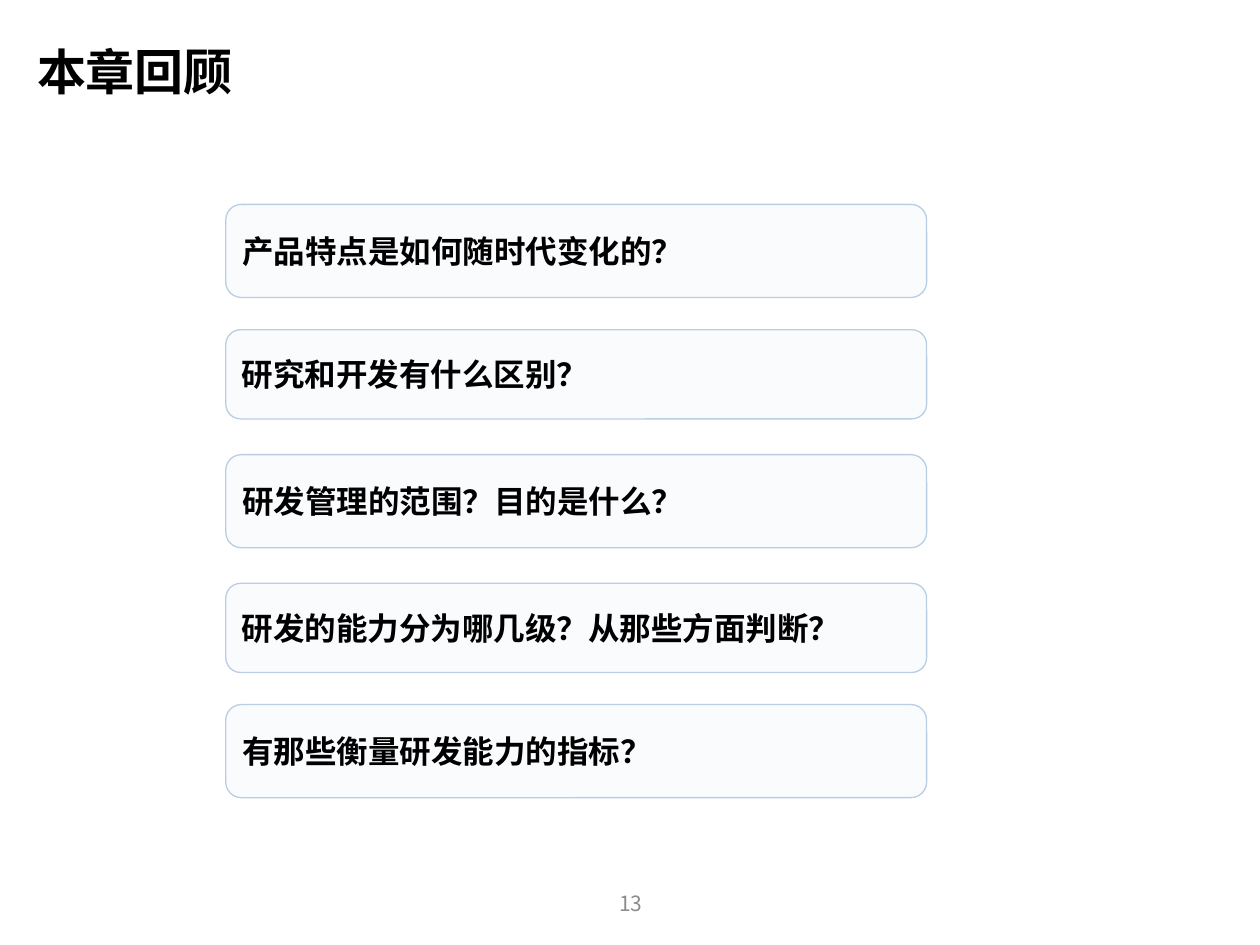
"""Build the chapter review slide with its five question boxes."""
from lxml import etree
from pptx import Presentation
from pptx.dml.color import RGBColor
from pptx.enum import shapes, text
from pptx.oxml import ns
from pptx.util import Pt

BLACK = RGBColor(0x00, 0x00, 0x00)
GRAY = RGBColor(0x8C, 0x8C, 0x8C)
PALE = RGBColor(0xDC, 0xE6, 0xF2)
EDGE = RGBColor(0xB9, 0xCD, 0xE5)
LATIN = "Calibri"
HAN = "Noto Sans CJK SC"


def write(shape, words, size, face, color, bold, align):
    frame = shape.text_frame
    frame.word_wrap = True
    frame.vertical_anchor = text.MSO_ANCHOR.MIDDLE
    frame.margin_left = frame.margin_right = Pt(6.75)
    frame.margin_top = frame.margin_bottom = Pt(3.2)
    para = frame.paragraphs[0]
    para.alignment = align
    run = para.add_run()
    run.text = words
    font = run.font
    font.size = Pt(size)
    font.bold = bold
    font.color.rgb = color
    font.name = face
    etree.SubElement(run._r.get_or_add_rPr(), ns.qn("a:ea"), typeface=HAN)
    return para


deck = Presentation()
deck.slide_width, deck.slide_height = Pt(720), Pt(540)
slide = deck.slides.add_slide(deck.slide_layouts[6])
left, center = text.PP_ALIGN.LEFT, text.PP_ALIGN.CENTER

title = slide.shapes.add_textbox(Pt(14.4), Pt(20.2), Pt(658), Pt(45.4))
write(title, "本章回顾", 28, HAN, BLACK, True, left).line_spacing = 0.9

items = [
    (116.8, 53.2, "产品特点是如何随时代变化的？"),
    (188.4, 51, "研究和开发有什么区别？"),
    (259.8, 53.2, "研发管理的范围？目的是什么？"),
    (333.3, 51, "研发的能力分为哪几级？从那些方面判断？"),
    (402.6, 53.2, "有那些衡量研发能力的指标？"),
]
for top, height, words in items:
    box = slide.shapes.add_shape(
        shapes.MSO_SHAPE.ROUNDED_RECTANGLE, Pt(129), Pt(top), Pt(400.5), Pt(height))
    box.adjustments[0] = 0.167
    box.shadow.inherit = False
    box.fill.solid()
    box.fill.fore_color.rgb = PALE
    tint = box._element.spPr.find(ns.qn("a:solidFill"))[0]
    etree.SubElement(tint, ns.qn("a:alpha"), val="14000")
    box.line.color.rgb = EDGE
    box.line.width = Pt(0.75)
    write(box, words, 18, LATIN, BLACK, True, left)

number = slide.shapes.add_textbox(Pt(279.4), Pt(501.8), Pt(162), Pt(28.8))
write(number, "13", 12, HAN, GRAY, False, center)

deck.save("out.pptx")
